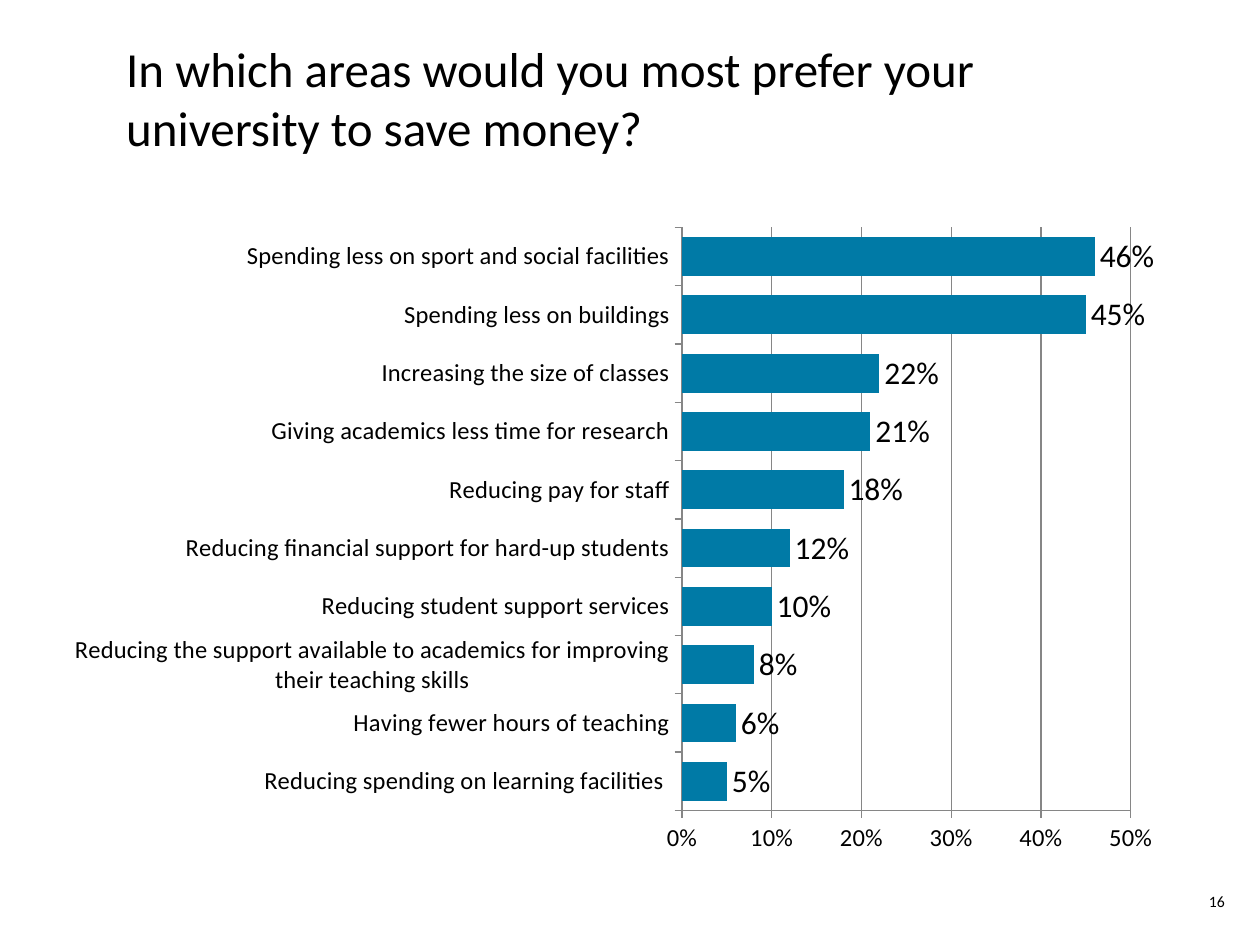
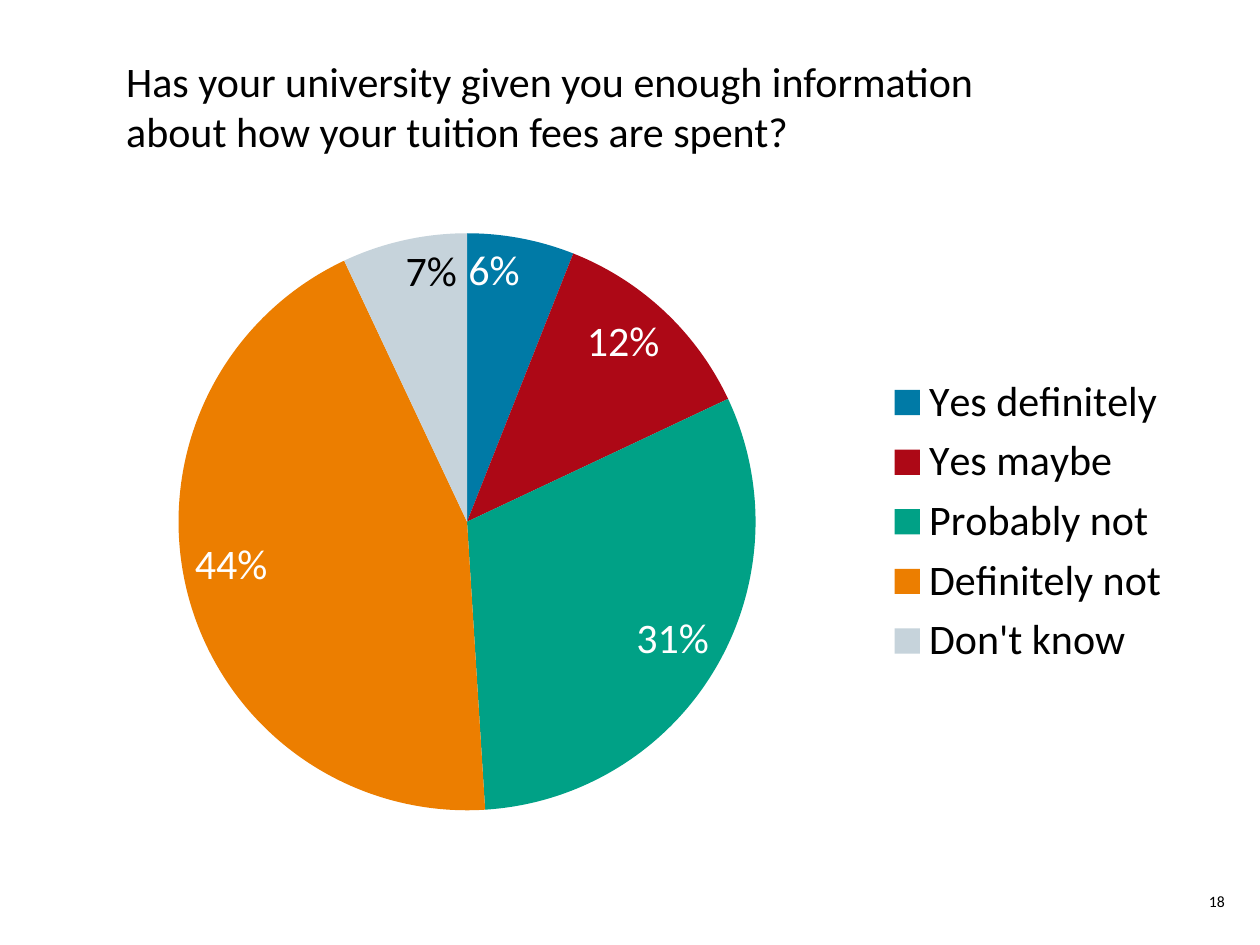
import pptx
import pptx.chart.data
import pptx.dml.color
import pptx.enum.chart
import pptx.enum.text
import pptx.oxml
import pptx.oxml.ns
import pptx.util

Cm = pptx.util.Cm
Pt = pptx.util.Pt
XL = pptx.enum.chart

FONT = "Calibri"
BLACK, WHITE, GRID = "000000", "FFFFFF", "868686"
BLUE, RED, GREEN, ORANGE, SILVER = "007AA6", "AD0816", "00A186", "EC7E00", "C6D3DB"

SLIDE_SIZE = (25.4, 19.05)
QUESTION_BOX = (2.29, 1.32, 19.2, 1.96)
NUMBER_BOX = (23.5, 17.65, 1.19, 1.02)

SAVINGS = {
    "number": "16",
    "question": "In which areas would you most prefer your university to save money?",
    "question_size": 28,
    "box": (1.09, 4.32, 22.61, 13.21),
    "plot_area": (0.56, 0.02, 0.4, 0.89),
    "answers": [
        ("Reducing spending on learning facilities ", 0.05),
        ("Having fewer hours of teaching", 0.06),
        ("Reducing the support available to academics for improving their teaching skills", 0.08),
        ("Reducing student support services", 0.10),
        ("Reducing financial support for hard-up students", 0.12),
        ("Reducing pay for staff", 0.18),
        ("Giving academics less time for research", 0.21),
        ("Increasing the size of classes", 0.22),
        ("Spending less on buildings", 0.45),
        ("Spending less on sport and social facilities", 0.46),
    ],
}

FEES = {
    "number": "18",
    "question": "Has your university given you enough information about how your tuition fees are spent?",
    "question_size": 24,
    "box": (1.09, 4.32, 22.81, 12.4),
    "plot_area": (0.11, 0.03, 0.51, 0.94),
    "answers": [
        ("Yes definitely", 0.06),
        ("Yes maybe", 0.12),
        ("Probably not", 0.31),
        ("Definitely not", 0.44),
        ("Don't know", 0.07),
    ],
    "colours": [BLUE, RED, GREEN, ORANGE, SILVER],
}


def colour(value):
    return pptx.dml.color.RGBColor.from_string(value)


def apply(target, values):
    for name, value in values.items():
        setattr(target, name, value)


def place(box):
    return [Cm(length) for length in box]


def style_font(font, size, value=BLACK):
    apply(font, {"name": FONT, "size": Pt(size), "bold": False})
    font.color.rgb = colour(value)


def fill_solid(fill, value):
    fill.solid()
    fill.fore_color.rgb = colour(value)


def add_question(slide, content):
    question = slide.shapes.title
    apply(question, dict(zip(("left", "top", "width", "height"), place(QUESTION_BOX))))
    frame = question.text_frame
    frame.text = content["question"]
    apply(frame, {
        "word_wrap": True,
        "auto_size": pptx.enum.text.MSO_AUTO_SIZE.NONE,
        "vertical_anchor": pptx.enum.text.MSO_ANCHOR.BOTTOM,
    })
    paragraph = frame.paragraphs[0]
    paragraph.alignment = pptx.enum.text.PP_ALIGN.LEFT
    style_font(paragraph.runs[0].font, content["question_size"])


def add_number(slide, content):
    frame = slide.shapes.add_textbox(*place(NUMBER_BOX)).text_frame
    apply(frame, {
        "text": content["number"],
        "word_wrap": True,
        "margin_right": 0,
        "vertical_anchor": pptx.enum.text.MSO_ANCHOR.MIDDLE,
    })
    paragraph = frame.paragraphs[0]
    paragraph.alignment = pptx.enum.text.PP_ALIGN.RIGHT
    style_font(paragraph.runs[0].font, 9)


def fix_plot_area(chart, fractions):
    qn = pptx.oxml.ns.qn
    area = chart.element.find(".//" + qn("c:plotArea"))
    for automatic in area.findall(qn("c:layout")):
        area.remove(automatic)
    settings = [("layoutTarget", "inner"), ("xMode", "edge"), ("yMode", "edge")]
    settings += zip("xywh", fractions)
    inner = "".join(f'<c:{name} val="{value}"/>' for name, value in settings)
    area.insert(0, pptx.oxml.parse_xml(
        f'<c:layout {pptx.oxml.ns.nsdecls("c")}><c:manualLayout>'
        f"{inner}</c:manualLayout></c:layout>"))


def add_answers(slide, content, kind, size):
    data = pptx.chart.data.CategoryChartData(number_format="0%")
    data.categories = [answer for answer, share in content["answers"]]
    data.add_series("Series 1", [share for answer, share in content["answers"]])
    chart = slide.shapes.add_chart(kind, *place(content["box"]), data).chart
    apply(chart, {"has_title": False, "has_legend": False})
    style_font(chart.font, size)
    fix_plot_area(chart, content["plot_area"])
    return chart


def label_shares(series, size, value, position):
    labels = series.data_labels
    apply(labels, {
        "show_value": True,
        "show_percentage": False,
        "number_format": "0%",
        "number_format_is_linked": False,
        "position": position,
    })
    style_font(labels.font, size, value)


def draw_savings(slide, content):
    chart = add_answers(slide, content, XL.XL_CHART_TYPE.BAR_CLUSTERED, 14)
    plot = chart.plots[0]
    apply(plot, {"gap_width": 50, "vary_by_categories": False})
    series = plot.series[0]
    series.invert_if_negative = False
    fill_solid(series.format.fill, BLUE)
    label_shares(series, 18, BLACK, XL.XL_LABEL_POSITION.OUTSIDE_END)
    shares = chart.value_axis
    apply(shares, {
        "minimum_scale": 0,
        "maximum_scale": 0.5,
        "major_unit": 0.1,
        "has_major_gridlines": True,
    })
    apply(shares.tick_labels, {"number_format": "0%", "number_format_is_linked": False})
    for axis in (chart.category_axis, shares):
        axis.major_tick_mark = XL.XL_TICK_MARK.OUTSIDE
        style_font(axis.tick_labels.font, 14)
    for rule in (chart.category_axis, shares, shares.major_gridlines):
        rule.format.line.width = Pt(0.75)
        rule.format.line.color.rgb = colour(GRID)


def draw_fees(slide, content):
    chart = add_answers(slide, content, XL.XL_CHART_TYPE.PIE, 24)
    plot = chart.plots[0]
    plot.vary_by_categories = True
    series = plot.series[0]
    inside = XL.XL_LABEL_POSITION.INSIDE_END
    label_shares(series, 24, WHITE, inside)
    for index, value in enumerate(content["colours"]):
        fill_solid(series.points[index].format.fill, value)
    undecided = series.points[len(content["answers"]) - 1].data_label
    style_font(undecided.font, 24)
    undecided.position = inside
    chart.has_legend = True
    apply(chart.legend, {
        "position": XL.XL_LEGEND_POSITION.RIGHT,
        "include_in_layout": False,
    })
    style_font(chart.legend.font, 24)


def main():
    deck = pptx.Presentation()
    deck.slide_width, deck.slide_height = place(SLIDE_SIZE)
    for content, draw in ((SAVINGS, draw_savings), (FEES, draw_fees)):
        slide = deck.slides.add_slide(deck.slide_layouts[5])
        fill_solid(slide.background.fill, WHITE)
        add_number(slide, content)
        add_question(slide, content)
        draw(slide, content)
    deck.save("out.pptx")


if __name__ == "__main__":
    main()
